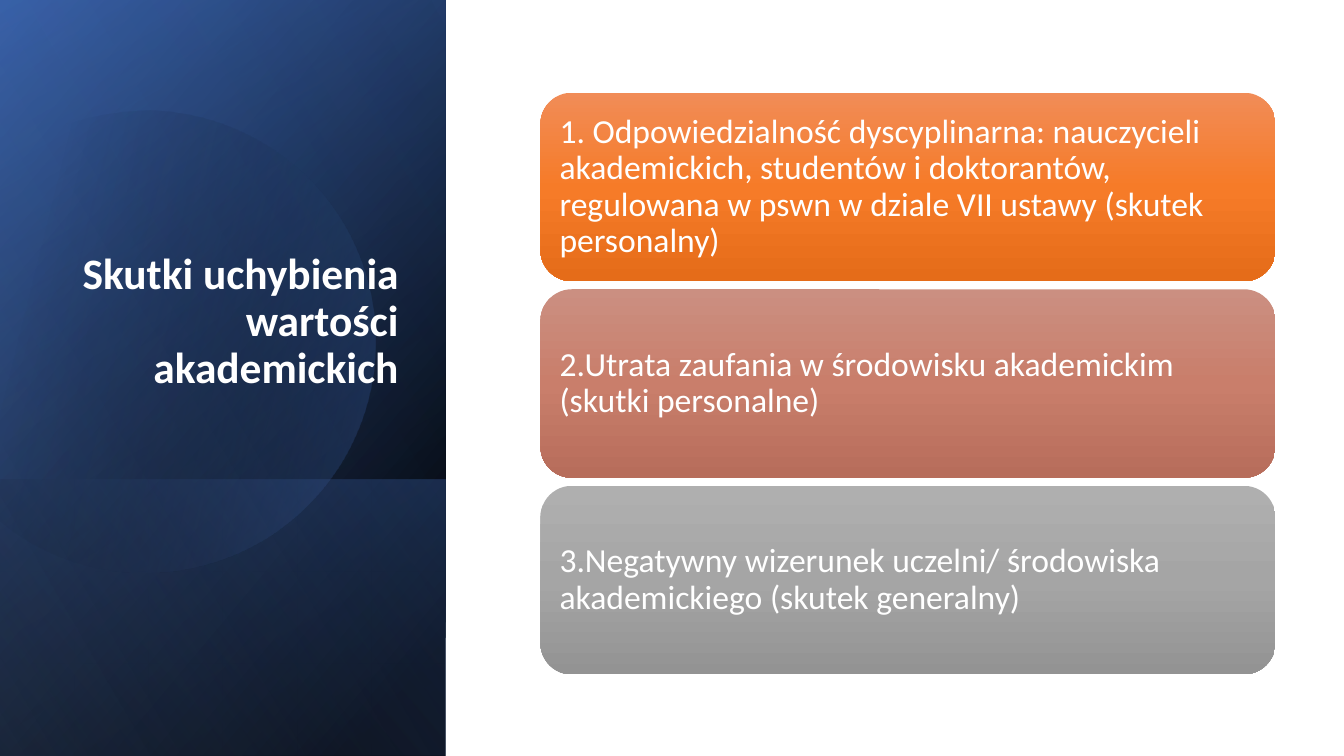
from lxml.etree import SubElement
from pptx import Presentation
from pptx.dml.color import RGBColor
from pptx.enum.shapes import MSO_SHAPE
from pptx.enum.text import MSO_ANCHOR, PP_ALIGN
from pptx.oxml.ns import qn
from pptx.util import Inches, Pt

BLACK = RGBColor(0x00, 0x00, 0x00)
WHITE = RGBColor(0xFF, 0xFF, 0xFF)
NAVY = RGBColor(0x2F, 0x55, 0x97)
BLUE = RGBColor(0x44, 0x72, 0xC4)
LIGHT_BLUE = RGBColor(0x8F, 0xAA, 0xDC)
ORANGES = [RGBColor(0xF1, 0x8C, 0x57), RGBColor(0xF6, 0x7B, 0x28), RGBColor(0xE5, 0x6C, 0x19)]
REDS = [RGBColor(0xCB, 0x8F, 0x81), RGBColor(0xC9, 0x7E, 0x6B), RGBColor(0xB7, 0x6D, 0x5B)]
GREYS = [RGBColor(0xAF, 0xAF, 0xAF), RGBColor(0xA5, 0xA5, 0xA5), RGBColor(0x93, 0x93, 0x93)]
FONT = "Calibri"

TITLE = "Skutki uchybienia wartości akademickich"
CARDS = [
    ("1. Odpowiedzialność dyscyplinarna: nauczycieli akademickich, studentów i doktorantów, "
     "regulowana w pswn w dziale VII ustawy (skutek personalny)", ORANGES),
    ("2.Utrata zaufania w środowisku akademickim (skutki personalne)", REDS),
    ("3.Negatywny wizerunek uczelni/ środowiska akademickiego (skutek generalny)", GREYS),
]

# Disc outline before rotation: one point is a line, three points are a Bézier curve
DISC_START = (2.67, 0.1)
DISC_SEGMENTS = [
    [(3.59, 0.39), (4.27, 1.26), (4.27, 2.28)],
    [(4.27, 3.55), (3.24, 4.57), (1.98, 4.57)],
    [(1.19, 4.57), (0.49, 4.17), (0.09, 3.56)],
    [(0, 3.42)],
    [(0.91, 0.27)],
    [(1.09, 0.18)],
    [(1.37, 0.06), (1.66, 0), (1.98, 0)],
    [(2.22, 0), (2.44, 0.04), DISC_START],
]


def set_gradient(shape, stops, angle):
    """Fill with (position %, colour, opacity %) stops; drop line and shadow."""
    shape.shadow.inherit = False
    shape.line.fill.background()
    shape.fill.solid()
    solid = shape._element.spPr.find(qn("a:solidFill"))
    grad = solid.makeelement(qn("a:gradFill"), {"rotWithShape": "1"})
    gs_list = SubElement(grad, qn("a:gsLst"))
    for position, colour, opacity in stops:
        gs = SubElement(gs_list, qn("a:gs"), pos=str(position * 1000))
        clr = SubElement(gs, qn("a:srgbClr"), val=str(colour))
        if opacity < 100:
            SubElement(clr, qn("a:alpha"), val=str(opacity * 1000))
    SubElement(grad, qn("a:lin"), ang=str(angle * 60000), scaled="0")
    solid.getparent().replace(solid, grad)


def add_layer(s, x, y, w, h, stops, angle):
    """Add a mirrored rectangle, turned by 90 degrees, that covers the given box."""
    layer = s.shapes.add_shape(MSO_SHAPE.RECTANGLE, Inches(x + (w - h) / 2),
                               Inches(y + (h - w) / 2), Inches(h), Inches(w))
    layer.rotation = 90
    layer._element.spPr.find(qn("a:xfrm")).set("flipH", "1")
    set_gradient(layer, stops, angle)


def add_disc(s, x, y):
    def place(point):
        return Inches(x + point[0]), Inches(y + point[1])

    builder = s.shapes.build_freeform(*place(DISC_START))
    builder.add_line_segments([place(pt) for segment in DISC_SEGMENTS for pt in segment])
    disc = builder.convert_to_shape()
    lines = iter(list(disc._element.spPr.iter(qn("a:lnTo"))))
    for segment in DISC_SEGMENTS:
        first, *others = [next(lines) for _ in segment]
        if others:
            first.tag = qn("a:cubicBezTo")
        for line in others:
            first.append(line[0])
            line.getparent().remove(line)
    disc.rotation = 343.9
    set_gradient(disc, [(29, BLACK, 0), (100, BLUE, 43)], 30)


def format_text(tf, text, size, anchor, align, bold=False):
    tf.word_wrap = True
    tf.vertical_anchor = anchor
    p = tf.paragraphs[0]
    p.text = text
    p.alignment = align
    p.line_spacing = 0.9
    p.font.name = FONT
    p.font.size = Pt(size)
    p.font.bold = bold
    p.font.color.rgb = WHITE


def add_title_panel(s, x, y, w, h):
    foot = 2.74
    add_layer(s, x, y, w, h, [(8, BLACK, 100), (100, NAVY, 100)], 50)
    add_layer(s, x, y, w, h, [(0, BLACK, 0), (99, BLUE, 46)], 30)
    add_layer(s, x, y + h - foot, w, foot, [(2, BLUE, 29), (100, BLACK, 30)], 130)
    add_disc(s, x - 0.55, y + 1.06)
    add_layer(s, x, y, w, h, [(0, BLACK, 0), (99, LIGHT_BLUE, 11)], 120)
    title = s.shapes.add_textbox(Inches(x + 0.64), Inches(y + 1.84), Inches(3.41), Inches(2.62))
    tf = title.text_frame
    format_text(tf, TITLE, 31, MSO_ANCHOR.BOTTOM, PP_ALIGN.RIGHT, bold=True)
    tf.margin_bottom = Inches(0.56)


def add_cards(s, x, y, w, h, gap=0.08):
    card_h = (h - gap * (len(CARDS) - 1)) / len(CARDS)
    for i, (text, colours) in enumerate(CARDS):
        card = s.shapes.add_shape(MSO_SHAPE.ROUNDED_RECTANGLE, Inches(x),
                                  Inches(y + i * (card_h + gap)), Inches(w), Inches(card_h))
        set_gradient(card, [(50 * k, colour, 100) for k, colour in enumerate(colours)], 90)
        tf = card.text_frame
        format_text(tf, text, 24, MSO_ANCHOR.MIDDLE, PP_ALIGN.LEFT)
        tf.margin_left = tf.margin_right = tf.margin_top = tf.margin_bottom = Inches(0.1)


def main():
    prs = Presentation()
    prs.slide_width, prs.slide_height = Inches(13.33), Inches(7.5)
    s = prs.slides.add_slide(prs.slide_layouts[6])
    add_title_panel(s, 0, 0, 4.42, 7.5)
    add_cards(s, 5.36, 0.92, 7.29, 5.77)
    prs.save("out.pptx")


if __name__ == "__main__":
    main()
